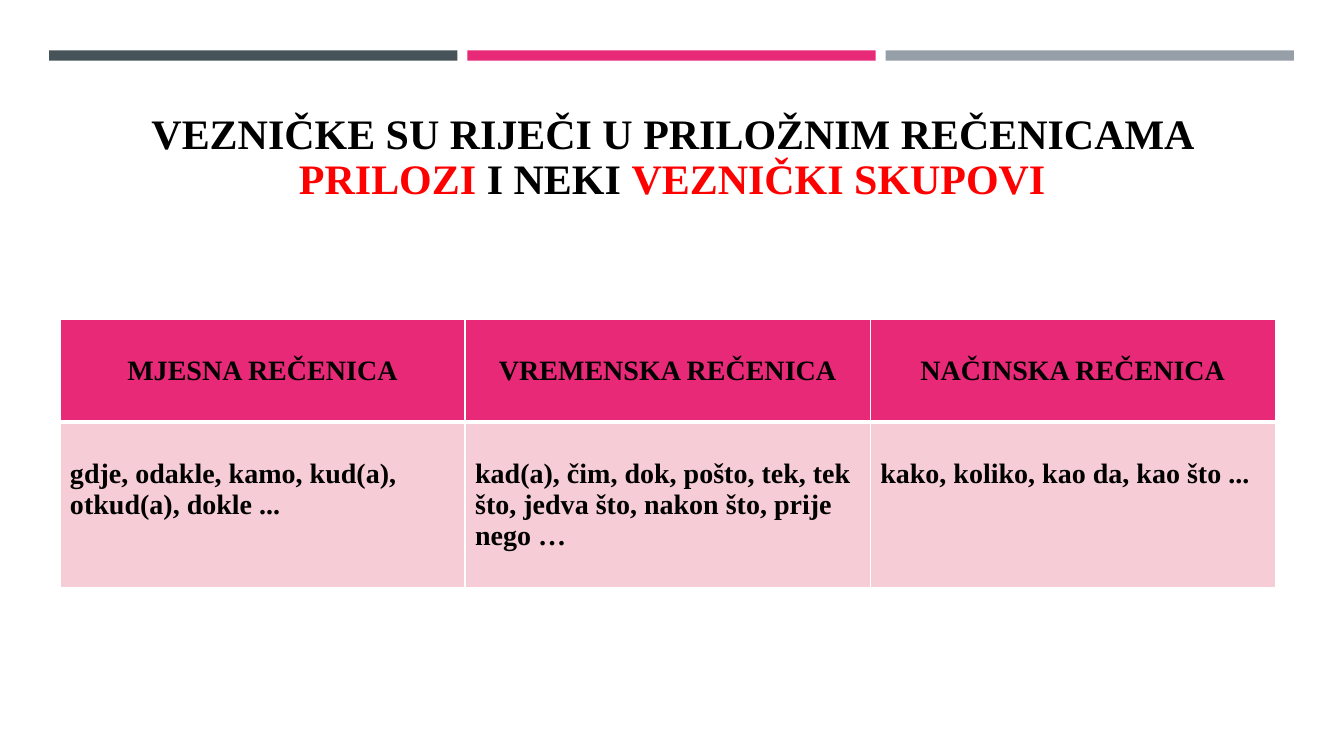
from lxml.etree import SubElement
from pptx import Presentation
from pptx.dml.color import RGBColor
from pptx.enum.shapes import MSO_SHAPE as Shape
from pptx.enum.text import MSO_ANCHOR as Anchor, PP_ALIGN as Align
from pptx.oxml.ns import qn
from pptx.util import Cm, Pt

BLACK = RGBColor(0x00, 0x00, 0x00)
RED = RGBColor(0xFF, 0x00, 0x00)
WHITE = RGBColor(0xFF, 0xFF, 0xFF)
SLATE = RGBColor(0x46, 0x53, 0x59)
PINK = RGBColor(0xE7, 0x29, 0x78)
GREY = RGBColor(0x96, 0x9F, 0xA7)
PALE_PINK = RGBColor(0xF6, 0xCD, 0xD6)

FONT = "Times New Roman"

HEADLINE = [
    ("VEZNIČKE SU RIJEČI U PRILOŽNIM REČENICAMA ", BLACK),
    ("PRILOZI", RED),
    (" I NEKI ", BLACK),
    ("VEZNIČKI SKUPOVI", RED),
]
CLAUSES = [
    ("MJESNA REČENICA", "gdje, odakle, kamo, kud(a), otkud(a), dokle ..."),
    ("VREMENSKA REČENICA",
     "kad(a), čim, dok, pošto, tek, tek što, jedva što, nakon što, prije nego …"),
    ("NAČINSKA REČENICA", "kako, koliko, kao da, kao što ..."),
]


def add_run(paragraph, text, size, color):
    run = paragraph.add_run()
    run.text = text
    run.font.name = FONT
    run.font.size = Pt(size)
    run.font.bold = True
    run.font.color.rgb = color


def add_bar(slide, left, color):
    bar = slide.shapes.add_shape(Shape.RECTANGLE, Cm(left), Cm(1.27), Cm(10.29), Cm(0.26))
    bar.shadow.inherit = False
    bar.fill.solid()
    bar.fill.fore_color.rgb = color
    bar.line.fill.background()


def add_headline(slide):
    headline = slide.shapes.add_textbox(Cm(1.63), Cm(1.96), Cm(30.63), Cm(3.3))
    frame = headline.text_frame
    frame.word_wrap = True
    frame.vertical_anchor = Anchor.BOTTOM
    paragraph = frame.paragraphs[0]
    paragraph.alignment = Align.CENTER
    paragraph.line_spacing = 0.9
    for text, color in HEADLINE:
        add_run(paragraph, text, 30, color)


def set_borders(cell, top, bottom):
    properties = cell._tc.get_or_add_tcPr()
    for side, width in (("L", 1), ("R", 1), ("T", top), ("B", bottom)):
        border = SubElement(properties, qn(f"a:ln{side}"), w=str(Pt(width)))
        fill = SubElement(border, qn("a:solidFill"))
        SubElement(fill, qn("a:srgbClr"), val=str(WHITE))


def fill_cell(cell, text, color, align):
    cell.fill.solid()
    cell.fill.fore_color.rgb = color
    paragraph = cell.text_frame.paragraphs[0]
    paragraph.alignment = align
    add_run(paragraph, text, 20, BLACK)


def add_clause_table(slide):
    table = slide.shapes.add_table(
        2, len(CLAUSES), Cm(1.51), Cm(8.06), Cm(30.63), Cm(6.75)).table
    table.rows[0].height = Cm(2.58)
    table.rows[1].height = Cm(4.17)
    for column, (clause, conjunctions) in enumerate(CLAUSES):
        table.columns[column].width = Cm(10.21)
        heading = table.cell(0, column)
        set_borders(heading, top=1, bottom=3)
        fill_cell(heading, clause, PINK, Align.CENTER)
        heading.vertical_anchor = Anchor.MIDDLE
        examples = table.cell(1, column)
        set_borders(examples, top=3, bottom=1)
        fill_cell(examples, conjunctions, PALE_PINK, Align.LEFT)
        examples.margin_top = Cm(0.91)


def main():
    deck = Presentation()
    deck.slide_width = Cm(33.87)
    deck.slide_height = Cm(19.05)
    slide = deck.slides.add_slide(deck.slide_layouts[6])
    for index, color in enumerate((SLATE, PINK, GREY)):
        add_bar(slide, 1.24 + index * 10.54, color)
    add_headline(slide)
    add_clause_table(slide)
    deck.save("out.pptx")


if __name__ == "__main__":
    main()
